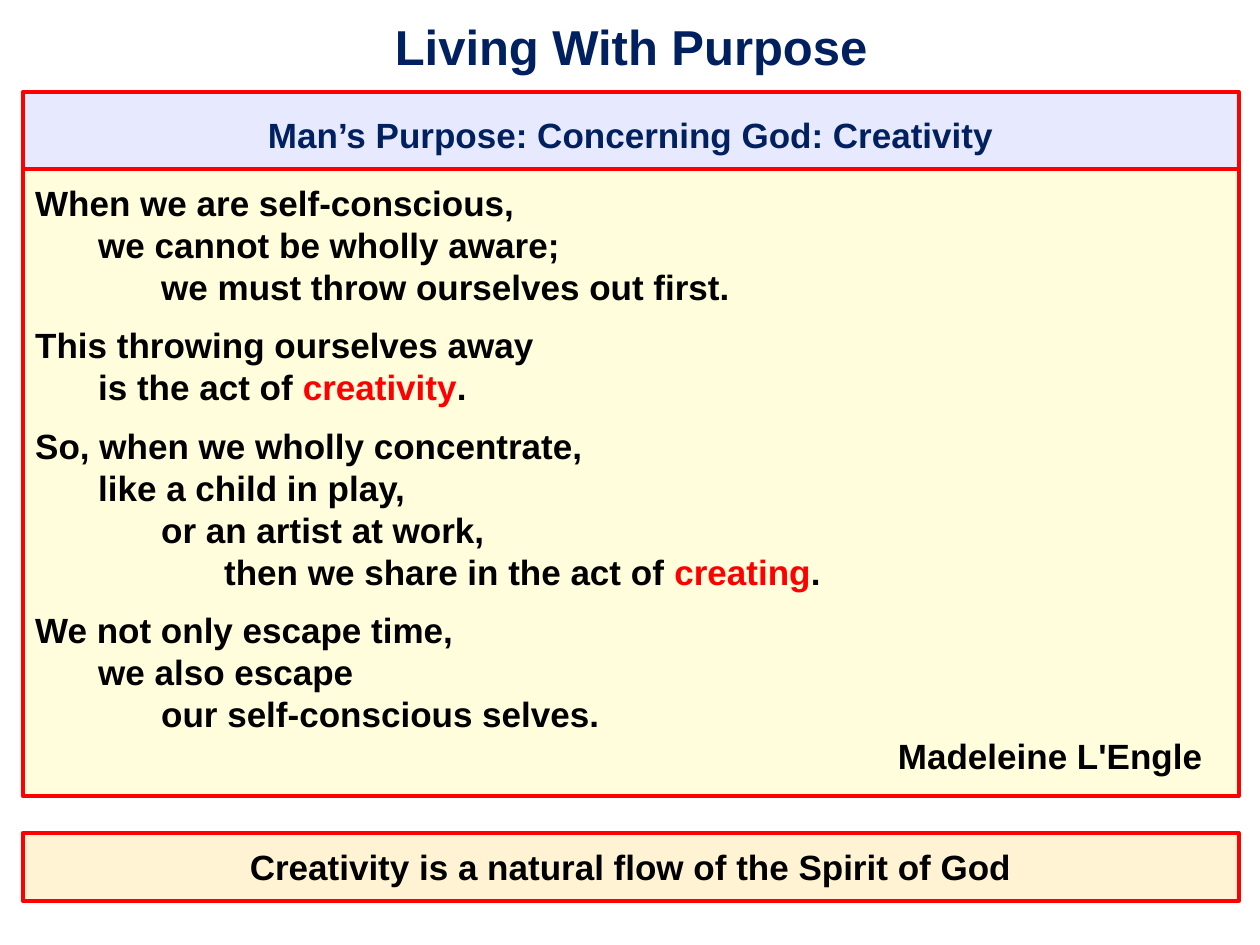
"""Build a slide with a poem on creativity between a heading and a closing line."""
from dataclasses import dataclass

from lxml.etree import SubElement
from pptx import Presentation
from pptx.dml.color import RGBColor
from pptx.enum.shapes import MSO_SHAPE
from pptx.enum.text import MSO_ANCHOR, PP_ALIGN
from pptx.oxml.ns import qn
from pptx.util import Pt


@dataclass(frozen=True)
class Theme:
    font: str = "Arial"
    title_size: float = 28
    body_size: float = 20
    navy: str = "002060"
    black: str = "000000"
    red: str = "FF0000"
    lavender: str = "D0D6FF"
    cream: str = "FFFDB8"
    peach: str = "FFE8AA"
    fill_opacity: int = 50
    border: float = 2.25
    inset: float = 7.2
    step: float = 36
    stanza_gap: float = 9.3


class SlideBuilder:
    def __init__(self, page, theme):
        self.page = page
        self.theme = theme

    def set_insets(self, frame, left, top, right, bottom):
        frame.word_wrap = True
        frame.margin_left, frame.margin_top = Pt(left), Pt(top)
        frame.margin_right, frame.margin_bottom = Pt(right), Pt(bottom)

    def style(self, paragraph, size, color, align=PP_ALIGN.LEFT):
        paragraph.alignment = align
        for span in paragraph.runs:
            span.font.name = self.theme.font
            span.font.size = Pt(size)
            span.font.bold = True
            span.font.color.rgb = RGBColor.from_string(color)

    def indent(self, paragraph, points):
        properties = paragraph._p.get_or_add_pPr()
        properties.set("marL", str(Pt(points)))
        properties.set("indent", "0")

    def title(self, text, left, top, width, height):
        box = self.page.shapes.add_textbox(Pt(left), Pt(top), Pt(width), Pt(height))
        frame = box.text_frame
        self.set_insets(frame, 4.3, 4.3, 10, 4.3)
        frame.vertical_anchor = MSO_ANCHOR.MIDDLE
        frame.text = text
        paragraph = frame.paragraphs[0]
        self.indent(paragraph, 3)
        self.style(paragraph, self.theme.title_size, self.theme.navy, PP_ALIGN.CENTER)

    def panel(self, top, height, fill, left=13, width=694.8):
        theme = self.theme
        box = self.page.shapes.add_shape(
            MSO_SHAPE.RECTANGLE, Pt(left), Pt(top), Pt(width), Pt(height))
        box.shadow.inherit = False
        box.fill.solid()
        box.fill.fore_color.rgb = RGBColor.from_string(fill)
        color = box._element.spPr.find(qn("a:solidFill"))[0]
        SubElement(color, qn("a:alpha")).set("val", str(theme.fill_opacity * 1000))
        box.line.color.rgb = RGBColor.from_string(theme.red)
        box.line.width = Pt(theme.border)
        frame = box.text_frame
        self.set_insets(frame, *[theme.inset] * 4)
        frame.vertical_anchor = MSO_ANCHOR.TOP
        return frame

    def banner(self, text, top, height, fill, color, spacing=1.0):
        frame = self.panel(top, height, fill)
        frame.text = text
        paragraph = frame.paragraphs[0]
        paragraph.line_spacing = spacing
        self.style(paragraph, self.theme.body_size, color, PP_ALIGN.CENTER)

    def poem(self, stanzas, author, author_indent, highlights, top, height):
        theme = self.theme
        frame = self.panel(top, height, theme.cream)
        lines = [(line, level * theme.step, level == 0 and number > 0)
                 for number, stanza in enumerate(stanzas)
                 for level, line in enumerate(stanza)]
        lines.append((author, author_indent, False))
        frame.text = "\n".join(line for line, _, _ in lines)
        for paragraph, (line, offset, opens_stanza) in zip(frame.paragraphs, lines):
            self.indent(paragraph, offset)
            if opens_stanza:
                paragraph.space_before = Pt(theme.stanza_gap)
            word = next((word for word in highlights if word in line), None)
            if word:
                before, after = line.split(word)
                paragraph.runs[0].text = before
                for part in (word, after):
                    paragraph.add_run().text = part
            self.style(paragraph, theme.body_size, theme.black)
            if word:
                paragraph.runs[1].font.color.rgb = RGBColor.from_string(theme.red)


STANZAS = [
    ["When we are self-conscious,",
     "we cannot be wholly aware;",
     "we must throw ourselves out first."],
    ["This throwing ourselves away",
     "is the act of creativity."],
    ["So, when we wholly concentrate,",
     "like a child in play,",
     "or an artist at work,",
     "then we share in the act of creating."],
    ["We not only escape time,",
     "we also escape",
     "our self-conscious selves."],
]


def main():
    deck = Presentation()
    deck.slide_width, deck.slide_height = Pt(720), Pt(540)
    theme = Theme()
    builder = SlideBuilder(deck.slides.add_slide(deck.slide_layouts[6]), theme)
    builder.title("Living With Purpose", 10, 1.5, 704, 49.7)
    builder.banner("Man’s Purpose: Concerning God: Creativity",
                   52.6, 43.9, theme.lavender, theme.navy, spacing=1.2)
    builder.poem(STANZAS, "Madeleine L'Engle", 493, ("creativity", "creating"),
                 96.5, 358.5)
    builder.banner("Creativity is a natural flow of the Spirit of God",
                   475.9, 38.9, theme.peach, theme.black)
    deck.save("out.pptx")


if __name__ == "__main__":
    main()
